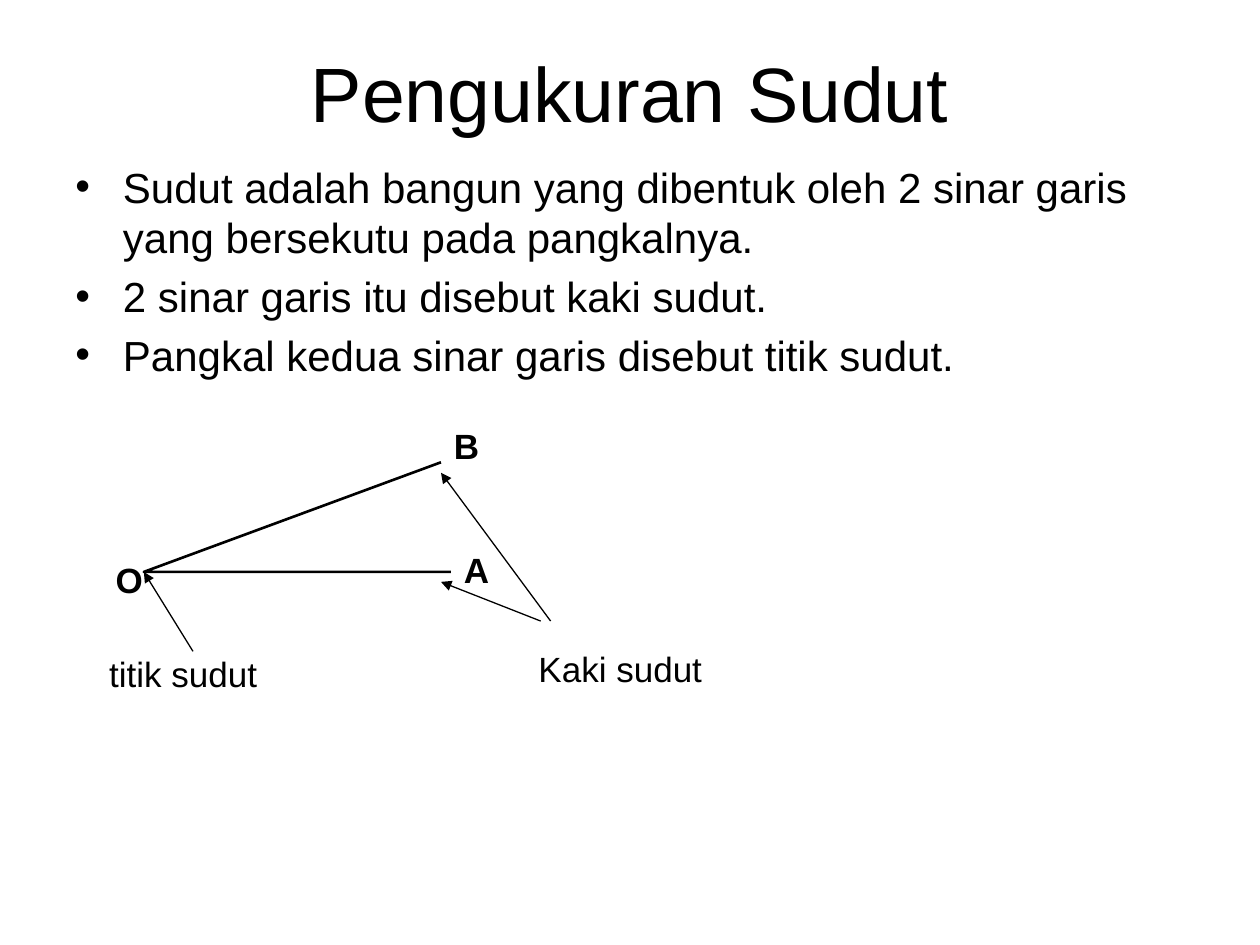
from lxml import etree
from pptx import Presentation
from pptx.dml.color import RGBColor
from pptx.enum.shapes import MSO_CONNECTOR
from pptx.enum.text import MSO_ANCHOR, PP_ALIGN
from pptx.oxml.ns import qn
from pptx.util import Cm, Pt

STRAIGHT = MSO_CONNECTOR.STRAIGHT
MIDDLE, TOP = MSO_ANCHOR.MIDDLE, MSO_ANCHOR.TOP
CENTER, LEFT = PP_ALIGN.CENTER, PP_ALIGN.LEFT
BLACK = "000000"
FONT = "Arial"


def color(hex_string):
    """Turn a hex string into a colour."""
    return RGBColor.from_string(hex_string)


def write_text(shape, lines, size, align=CENTER, anchor=TOP, bold=False):
    """Write one formatted paragraph per line and return the paragraphs."""
    frame = shape.text_frame
    frame.word_wrap = True
    frame.vertical_anchor = anchor
    frame.margin_left = frame.margin_right = Cm(0.25)
    frame.margin_top = frame.margin_bottom = Cm(0.13)
    for index, line in enumerate(lines):
        paragraph = frame.add_paragraph() if index else frame.paragraphs[0]
        paragraph.alignment = align
        run = paragraph.add_run()
        run.text = line
        run.font.name = FONT
        run.font.size = Pt(size)
        run.font.bold = bold
        run.font.color.rgb = color(BLACK)
    return frame.paragraphs


presentation = Presentation()
presentation.slide_width, presentation.slide_height = Cm(25.4), Cm(19.05)
slide = presentation.slides.add_slide(presentation.slide_layouts[5])
shapes = slide.shapes

# Title
title = shapes.title
title.left, title.top, title.width, title.height = Cm(1.27), Cm(0.76), Cm(22.86), Cm(2.16)
write_text(title, ["Pengukuran Sudut"], 44, anchor=MIDDLE)

# Definitions
definitions = shapes.add_textbox(Cm(1.27), Cm(3.12), Cm(22.86), Cm(5.28))
paragraphs = write_text(definitions, [
    "Sudut adalah bangun yang dibentuk oleh 2 sinar garis yang bersekutu pada pangkalnya.",
    "2 sinar garis itu disebut kaki sudut.",
    "Pangkal kedua sinar garis disebut titik sudut.",
], 24, align=LEFT)
for index, paragraph in enumerate(paragraphs):
    paragraph.space_before = Pt(4.8 if index else 0)
    properties = paragraph._p.get_or_add_pPr()
    properties.set("marL", str(Cm(0.96)))
    properties.set("indent", str(-Cm(0.96)))
    etree.SubElement(properties, qn("a:buFont")).set("typeface", FONT)
    etree.SubElement(properties, qn("a:buChar")).set("char", "•")

# Angle BOA
vertex = (Cm(2.9), Cm(11.53))
builder = shapes.build_freeform(Cm(8.89), Cm(9.32))
builder.add_line_segments([vertex, (Cm(9.09), Cm(11.53))], close=False)
angle = builder.convert_to_shape()
angle.shadow.inherit = False
angle.fill.background()
angle.line.color.rgb = color(BLACK)
angle.line.width = Pt(1.5)

# Labels: text, left, top, width, bold
labels = [
    ("O", 1.5, 11.13, 2.21, True),
    ("B", 8.3, 8.43, 2.21, True),
    ("A", 8.5, 10.92, 2.21, True),
    ("Kaki sudut", 10.5, 12.93, 4.01, False),
    ("titik sudut", 1.5, 13.03, 4.39, False),
]
for text, left, top, width, bold in labels:
    label = shapes.add_textbox(Cm(left), Cm(top), Cm(width), Cm(1.09))
    write_text(label, [text], 20, bold=bold)

# Arrows from the names to the parts of the angle
arrows = [
    ((Cm(11.1), Cm(12.52)), (Cm(8.89), Cm(9.53))),
    ((Cm(10.9), Cm(12.52)), (Cm(8.89), Cm(11.73))),
    ((Cm(3.89), Cm(13.13)), vertex),
]
for start, end in arrows:
    arrow = shapes.add_connector(STRAIGHT, *start, *end)
    arrow.line.color.rgb = color(BLACK)
    arrow.line.width = Pt(0.75)
    etree.SubElement(arrow.line._get_or_add_ln(), qn("a:tailEnd")).set("type", "triangle")
    etree.SubElement(arrow._element.spPr, qn("a:effectLst"))

presentation.save("out.pptx")
